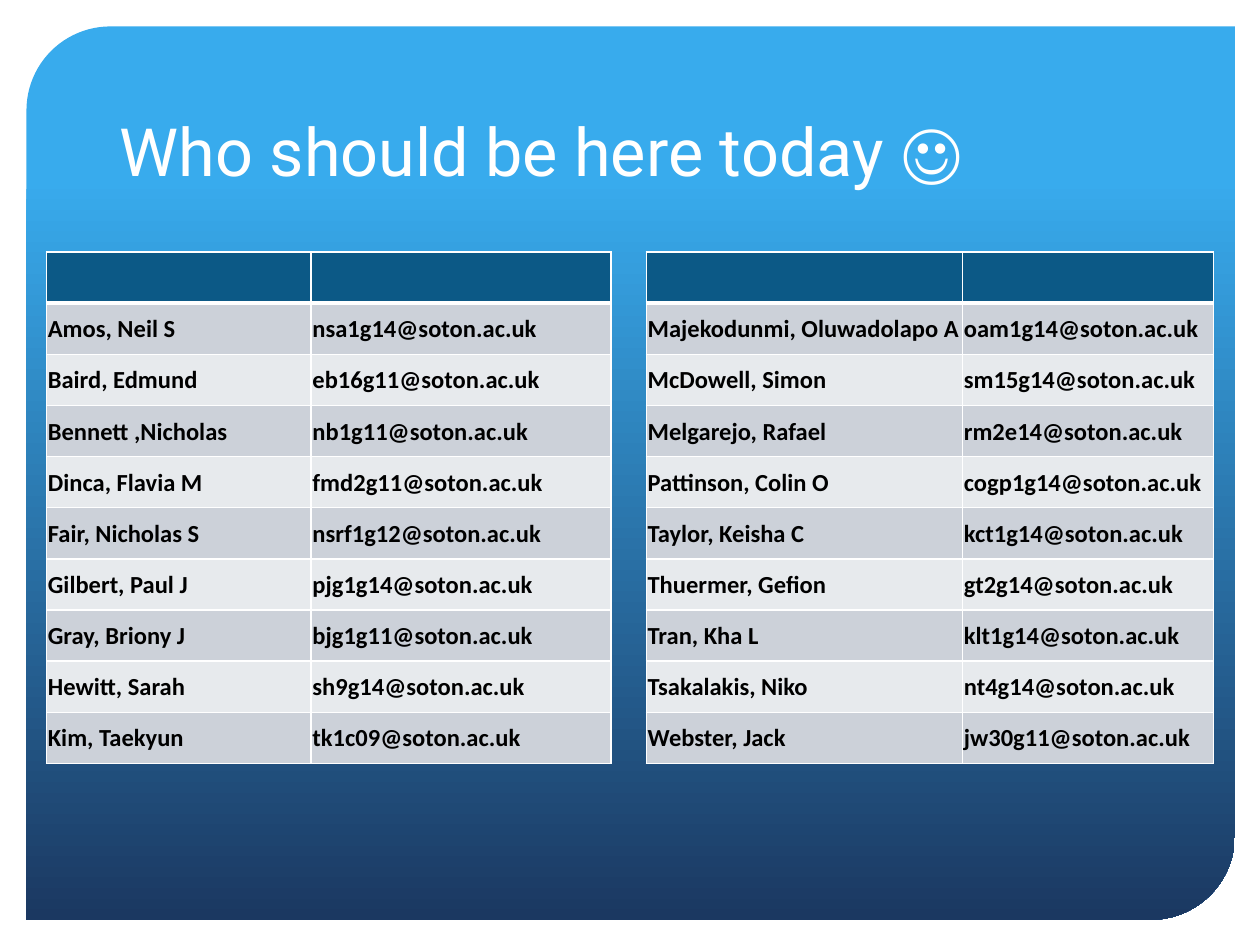
"""Build a slide listing the expected attendees in two tables."""
from dataclasses import dataclass

from lxml import etree
from pptx import Presentation
from pptx import util as u
from pptx.dml.color import RGBColor
from pptx.enum import shapes, text
from pptx.oxml.ns import qn
from pptx.slide import Slide
from pptx.table import _Cell


@dataclass(frozen=True)
class Theme:
    white: str = "FFFFFF"
    ink: str = "000000"
    panel_top: str = "38ABED"
    panel_bottom: str = "1B3861"
    header: str = "0C5986"
    bands: tuple[str, str] = ("CCD1D9", "E7EAED")
    title_font: str = "Roboto"
    body_font: str = "Calibri"
    title_size: int = 38
    body_size: int = 14
    thin_border: float = 1
    header_border: float = 3


@dataclass(frozen=True)
class Attendee:
    name: str
    user: str

    @property
    def email(self) -> str:
        return f"{self.user}@soton.ac.uk"


@dataclass(frozen=True)
class AttendeeTable:
    left: float
    column_widths: tuple[float, float]
    attendees: tuple[Attendee, ...]


THEME = Theme()
TABLE_TOP = 2
TABLE_HEIGHT = 4.06
TABLES = (
    AttendeeTable(0.37, (2.1, 2.38), (
        Attendee("Amos, Neil S", "nsa1g14"),
        Attendee("Baird, Edmund", "eb16g11"),
        Attendee("Bennett ,Nicholas", "nb1g11"),
        Attendee("Dinca, Flavia M", "fmd2g11"),
        Attendee("Fair, Nicholas S", "nsrf1g12"),
        Attendee("Gilbert, Paul J", "pjg1g14"),
        Attendee("Gray, Briony J", "bjg1g11"),
        Attendee("Hewitt, Sarah", "sh9g14"),
        Attendee("Kim, Taekyun", "tk1c09"),
    )),
    AttendeeTable(5.13, (2.51, 1.99), (
        Attendee("Majekodunmi, Oluwadolapo A", "oam1g14"),
        Attendee("McDowell, Simon", "sm15g14"),
        Attendee("Melgarejo, Rafael", "rm2e14"),
        Attendee("Pattinson, Colin O", "cogp1g14"),
        Attendee("Taylor, Keisha C", "kct1g14"),
        Attendee("Thuermer, Gefion", "gt2g14"),
        Attendee("Tran, Kha L", "klt1g14"),
        Attendee("Tsakalakis, Niko", "nt4g14"),
        Attendee("Webster, Jack", "jw30g11"),
    )),
)


def rgb(value: str) -> RGBColor:
    return RGBColor.from_string(value)


def style_runs(frame, font_name: str, size: float, color: str, bold: bool) -> None:
    for paragraph in frame.paragraphs:
        for run in paragraph.runs:
            run.font.name = font_name
            run.font.size = u.Pt(size)
            run.font.bold = bold
            run.font.color.rgb = rgb(color)


def draw_panel(slide: Slide) -> None:
    panel = slide.shapes.add_shape(
        shapes.MSO_SHAPE.ROUND_2_DIAG_RECTANGLE,
        u.Inches(0.21), u.Inches(0.21), u.Inches(9.59), u.Inches(7.09))
    panel.adjustments[0] = 0.094
    panel.adjustments[1] = 0
    panel.shadow.inherit = False
    panel.line.fill.background()
    panel.fill.gradient()
    panel.fill.gradient_angle = 270
    stops = ((0.17, THEME.panel_top), (1, THEME.panel_bottom))
    for stop, (position, color) in zip(panel.fill.gradient_stops, stops):
        stop.position = position
        stop.color.rgb = rgb(color)
    panel.element.getparent().insert(2, panel.element)


def write_title(slide: Slide, wording: str) -> None:
    title = slide.shapes.title
    title.left, title.top = u.Inches(0.85), u.Inches(0.42)
    title.width, title.height = u.Inches(8.29), u.Inches(1.14)
    frame = title.text_frame
    frame.text = wording
    frame.word_wrap = True
    frame.auto_size = text.MSO_AUTO_SIZE.NONE
    frame.vertical_anchor = text.MSO_ANCHOR.BOTTOM
    frame.paragraphs[0].alignment = text.PP_ALIGN.LEFT
    style_runs(frame, THEME.title_font, THEME.title_size, THEME.white, False)


def set_borders(cell: _Cell, top: float, bottom: float) -> None:
    properties = cell._tc.get_or_add_tcPr()
    widths = {"L": THEME.thin_border, "R": THEME.thin_border, "T": top, "B": bottom}
    for side, width in widths.items():
        line = etree.SubElement(properties, qn(f"a:ln{side}"), w=str(u.Pt(width)))
        fill = etree.SubElement(line, qn("a:solidFill"))
        etree.SubElement(fill, qn("a:srgbClr"), val=THEME.white)


def format_cell(cell: _Cell, wording: str, row: int) -> None:
    thin, thick = THEME.thin_border, THEME.header_border
    set_borders(cell, thick if row == 1 else thin, thick if row == 0 else thin)
    cell.fill.solid()
    cell.fill.fore_color.rgb = rgb(THEME.bands[(row - 1) % 2] if row else THEME.header)
    cell.vertical_anchor = text.MSO_ANCHOR.MIDDLE
    cell.margin_left = cell.margin_right = cell.margin_top = u.Inches(0.01)
    cell.margin_bottom = 0
    cell.text_frame.text = wording
    style_runs(cell.text_frame, THEME.body_font, THEME.body_size, THEME.ink, True)


def draw_table(slide: Slide, listing: AttendeeTable) -> None:
    rows = [("", "")] + [(person.name, person.email) for person in listing.attendees]
    table = slide.shapes.add_table(
        len(rows), len(listing.column_widths),
        u.Inches(listing.left), u.Inches(TABLE_TOP),
        u.Inches(sum(listing.column_widths)), u.Inches(TABLE_HEIGHT)).table
    for column, width in zip(table.columns, listing.column_widths):
        column.width = u.Inches(width)
    for row, wordings in enumerate(rows):
        for column, wording in enumerate(wordings):
            format_cell(table.cell(row, column), wording, row)


def main() -> None:
    presentation = Presentation()
    presentation.slide_width, presentation.slide_height = u.Inches(10), u.Inches(7.5)
    slide = presentation.slides.add_slide(presentation.slide_layouts[5])
    slide.background.fill.solid()
    slide.background.fill.fore_color.rgb = rgb(THEME.white)
    draw_panel(slide)
    write_title(slide, "Who should be here today ☺")
    for listing in TABLES:
        draw_table(slide, listing)
    presentation.save("out.pptx")


if __name__ == "__main__":
    main()
